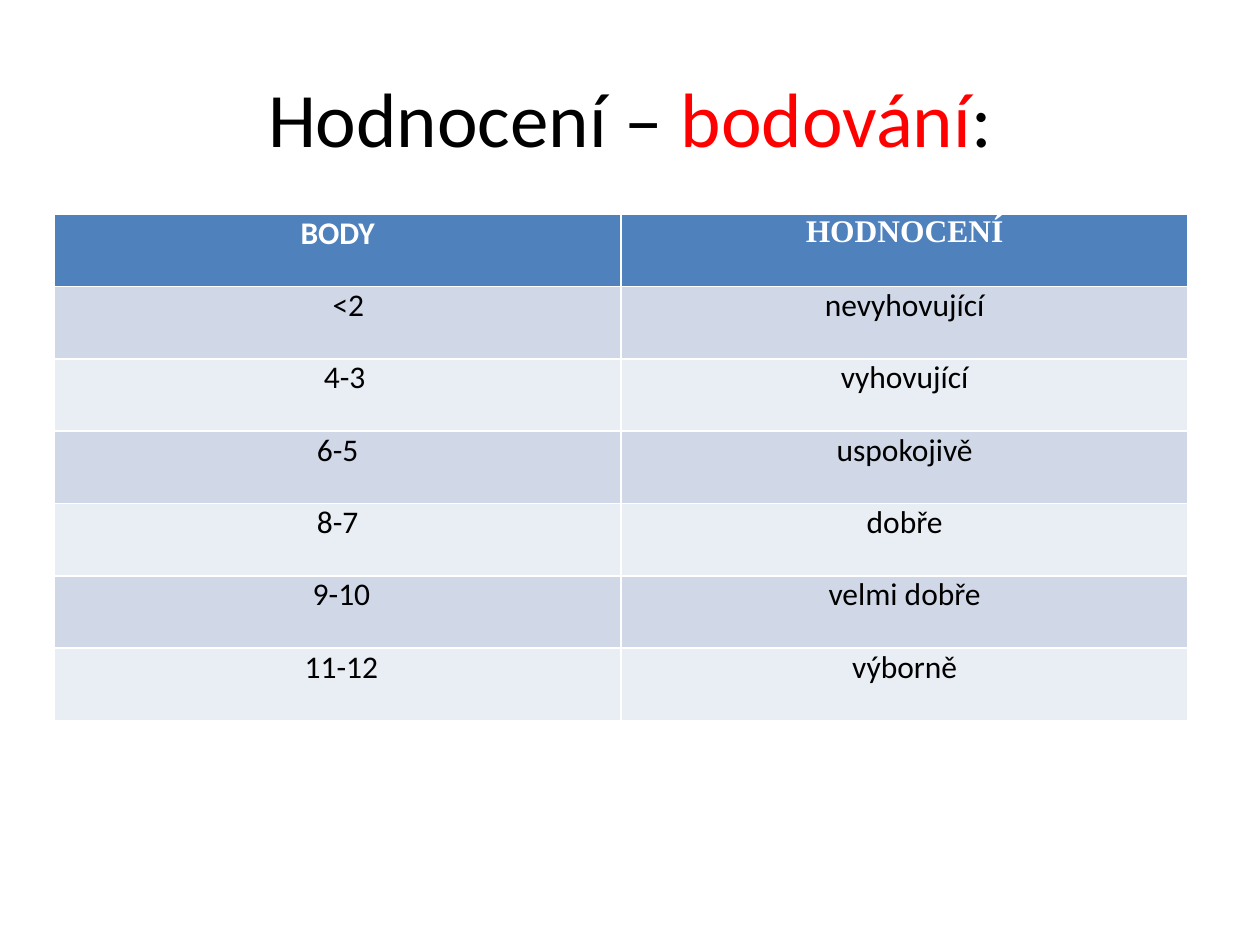
import pptx
import pptx.util
import pptx.dml.color
import pptx.enum.text

Inches, Pt = pptx.util.Inches, pptx.util.Pt
RGB = pptx.dml.color.RGBColor.from_string
CENTER = pptx.enum.text.PP_ALIGN.CENTER
MIDDLE = pptx.enum.text.MSO_ANCHOR.MIDDLE

THEME = {
    "text": RGB("000000"), "accent": RGB("FF0000"), "head_text": RGB("FFFFFF"),
    "head": RGB("4F81BD"), "bands": (RGB("D0D8E8"), RGB("E9EDF4")),
    "font": "Calibri", "head_fonts": ("Calibri", "Times New Roman"),
    "title_size": Pt(44), "table_size": Pt(18),
}

prs = pptx.Presentation()
prs.slide_width, prs.slide_height = Inches(10), Inches(7.5)
W, H = prs.slide_width, prs.slide_height
s = prs.slides.add_slide(prs.slide_layouts[5])

# Title with one highlighted word
title = s.shapes.title
title.left, title.top = int(W * 0.05), int(H * 0.04)
title.width, title.height = int(W * 0.9), Inches(1.25)
tf = title.text_frame
tf.vertical_anchor = MIDDLE
p = tf.paragraphs[0]
p.alignment = CENTER
p.font.name, p.font.size = THEME["font"], THEME["title_size"]
for text, color in (("Hodnocení – ", "text"), ("bodování", "accent"), (":", "text")):
    r = p.add_run()
    r.text = text
    r.font.color.rgb = THEME[color]

# Points, grade, and extra left indent of the points in inches
rows = [
    ("BODY", "HODNOCENÍ", 0),
    ("<2", "nevyhovující", 0.17),
    ("4-3", "vyhovující", 0.11),
    ("6-5", "uspokojivě", 0),
    ("8-7", "dobře", 0),
    ("9-10", "velmi dobře", 0.06),
    ("11-12", "výborně", 0.06),
]

# Grading table: the default table style draws the white grid lines
table = s.shapes.add_table(len(rows), 2, Inches(0.43), Inches(1.7),
                           int(W * 0.9), Inches(4.02)).table
for i, (points, grade, indent) in enumerate(rows):
    is_head = i == 0
    for j, text in enumerate((points, grade)):
        cell = table.cell(i, j)
        cell.fill.solid()
        cell.fill.fore_color.rgb = THEME["head"] if is_head else THEME["bands"][(i - 1) % 2]
        cell.margin_left = Inches(0.07 + (indent if j == 0 else 0))
        cell.margin_right = Inches(0.07)
        cell.margin_top = cell.margin_bottom = 0
        cell.text = text
        p = cell.text_frame.paragraphs[0]
        p.alignment = CENTER
        p.font.name = THEME["head_fonts"][j] if is_head else THEME["font"]
        p.font.size, p.font.bold = THEME["table_size"], is_head
        p.font.color.rgb = THEME["head_text" if is_head else "text"]

prs.save("out.pptx")
